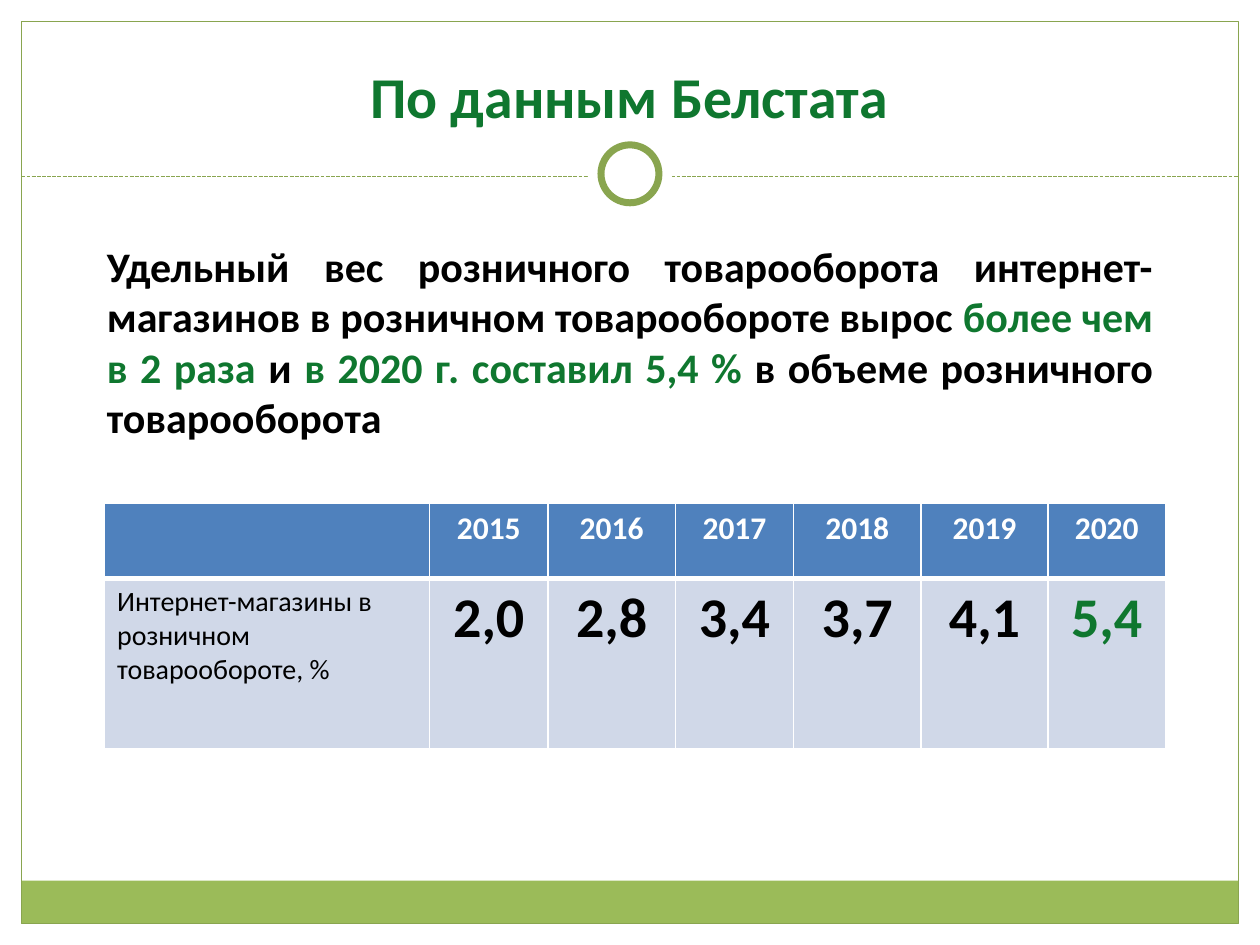
from lxml import etree
from pptx import Presentation
from pptx.dml.color import RGBColor
from pptx.enum.dml import MSO_LINE
from pptx.enum.shapes import MSO_CONNECTOR, MSO_SHAPE
from pptx.enum.text import MSO_ANCHOR, PP_ALIGN
from pptx.oxml.ns import qn
from pptx.util import Inches, Pt

RECT, OVAL = MSO_SHAPE.RECTANGLE, MSO_SHAPE.OVAL
LINE, DASH = MSO_CONNECTOR.STRAIGHT, MSO_LINE.SQUARE_DOT
LEFT, MID, FULL = PP_ALIGN.LEFT, PP_ALIGN.CENTER, PP_ALIGN.JUSTIFY
TOP, BASE = MSO_ANCHOR.TOP, MSO_ANCHOR.BOTTOM

FONT = "Calibri"
WHITE, BLACK, GREEN = "FFFFFF", "000000", "0F772F"
OLIVE, LIME, BLUE, PALE = "89A54F", "9BBB59", "4F81BD", "D0D8E8"

YEARS = ["", "2015", "2016", "2017", "2018", "2019", "2020"]
SHARES = ["Интернет-магазины в розничном товарообороте, %",
          "2,0", "2,8", "3,4", "3,7", "4,1", "5,4"]
CLAIM = [
    ("Удельный вес розничного товарооборота интернет-магазинов "
     "в розничном товарообороте вырос ", BLACK),
    ("более чем в 2 раза ", GREEN),
    ("и ", BLACK),
    ("в 2020 г. составил 5,4 % ", GREEN),
    ("в объеме розничного товарооборота", BLACK),
]


def color(code):
    """Turn a hex string into a colour."""
    return RGBColor.from_string(code)


def shape(slide, kind, box, fill=None, line=None, width=0.75):
    """Add a flat preset shape."""
    item = slide.shapes.add_shape(kind, *map(Inches, box))
    item.shadow.inherit = False
    if fill:
        item.fill.solid()
        item.fill.fore_color.rgb = color(fill)
    else:
        item.fill.background()
    if line:
        item.line.color.rgb = color(line)
        item.line.width = Pt(width)
    else:
        item.line.fill.background()


def write(para, runs, size, bold=True, align=MID):
    """Fill a paragraph with coloured runs."""
    para.alignment = align
    font = para.font
    font.name, font.size, font.bold = FONT, Pt(size), bold
    if len({tint for _, tint in runs}) == 1:
        font.color.rgb = color(runs[0][1])
    for text, tint in runs:
        run = para.add_run()
        run.text = text
        if len(runs) > 1:
            run.font.color.rgb = color(tint)


def label(slide, box, runs, size, align, anchor):
    """Add a wrapped text box."""
    frame = slide.shapes.add_textbox(*map(Inches, box)).text_frame
    frame.word_wrap = True
    frame.vertical_anchor = anchor
    write(frame.paragraphs[0], runs, size, align=align)


def border(cell, sides):
    """Draw white cell borders from side tags and widths."""
    props = cell._tc.get_or_add_tcPr()
    for spot, (side, width) in enumerate(sides.items()):
        edge = etree.Element(qn(f"a:{side}"), w=str(Pt(width)))
        fill = etree.SubElement(edge, qn("a:solidFill"))
        etree.SubElement(fill, qn("a:srgbClr"), val=WHITE)
        props.insert(spot, edge)


def frame(slide, box):
    """Draw the page border, bottom band, dashed rule and ring."""
    left, top, wide, high = box
    rule, mid = top + 1.23, left + wide / 2
    shape(slide, RECT, (left, top + high - 0.34, wide, 0.34), LIME)
    shape(slide, RECT, box, line=OLIVE)
    dash = slide.shapes.add_connector(
        LINE, *map(Inches, (left, rule, left + wide, rule)))
    dash.line.color.rgb = color(OLIVE)
    dash.line.width = Pt(0.75)
    dash.line.dash_style = DASH
    etree.SubElement(dash._element.spPr, qn("a:effectLst"))
    for size, line in ((0.67, None), (0.46, OLIVE)):
        spot = (mid - size / 2, rule - 0.02 - size / 2, size, size)
        shape(slide, OVAL, spot, WHITE, line, 4)


def table(slide, box, cols, rows):
    """Add the table of yearly shares."""
    grid = slide.shapes.add_table(
        len(rows), len(cols), *map(Inches, box)).table
    for col, wide in zip(grid.columns, cols):
        col.width = Inches(wide)
    for row, high in zip(grid.rows, rows):
        row.height = Inches(high)
    last = len(cols) - 1
    for r, words in enumerate((YEARS, SHARES)):
        for c, text in enumerate(words):
            cell = grid.cell(r, c)
            cell.fill.solid()
            cell.fill.fore_color.rgb = color(PALE if r else BLUE)
            border(cell, {"lnL": 1, "lnR": 1,
                          "lnT": 3 if r else 1, "lnB": 1 if r else 3})
            tint = WHITE if r == 0 else GREEN if c == last else BLACK
            name = r == 1 and c == 0
            size = 18 if r == 0 else 16 if name else 32
            write(cell.text_frame.paragraphs[0], [(text, tint)], size,
                  not name, LEFT if name else MID)


def main():
    """Build and save the slide."""
    deck = Presentation()
    deck.slide_width, deck.slide_height = Inches(10), Inches(7.5)
    slide = deck.slides.add_slide(deck.slide_layouts[6])
    frame(slide, (0.17, 0.17, 9.66, 7.16))
    label(slide, (0.33, 0.25, 9.33, 0.83),
          [("По данным Белстата", GREEN)], 33, MID, BASE)
    table(slide, (0.83, 3.99, 8.42, 1.95),
          (2.58, 0.94, 1.01, 0.94, 1.01, 1.01, 0.93), (0.6, 1.35))
    label(slide, (0.75, 1.86, 8.5, 1.72), CLAIM, 24, FULL, TOP)
    deck.save("out.pptx")


if __name__ == "__main__":
    main()
